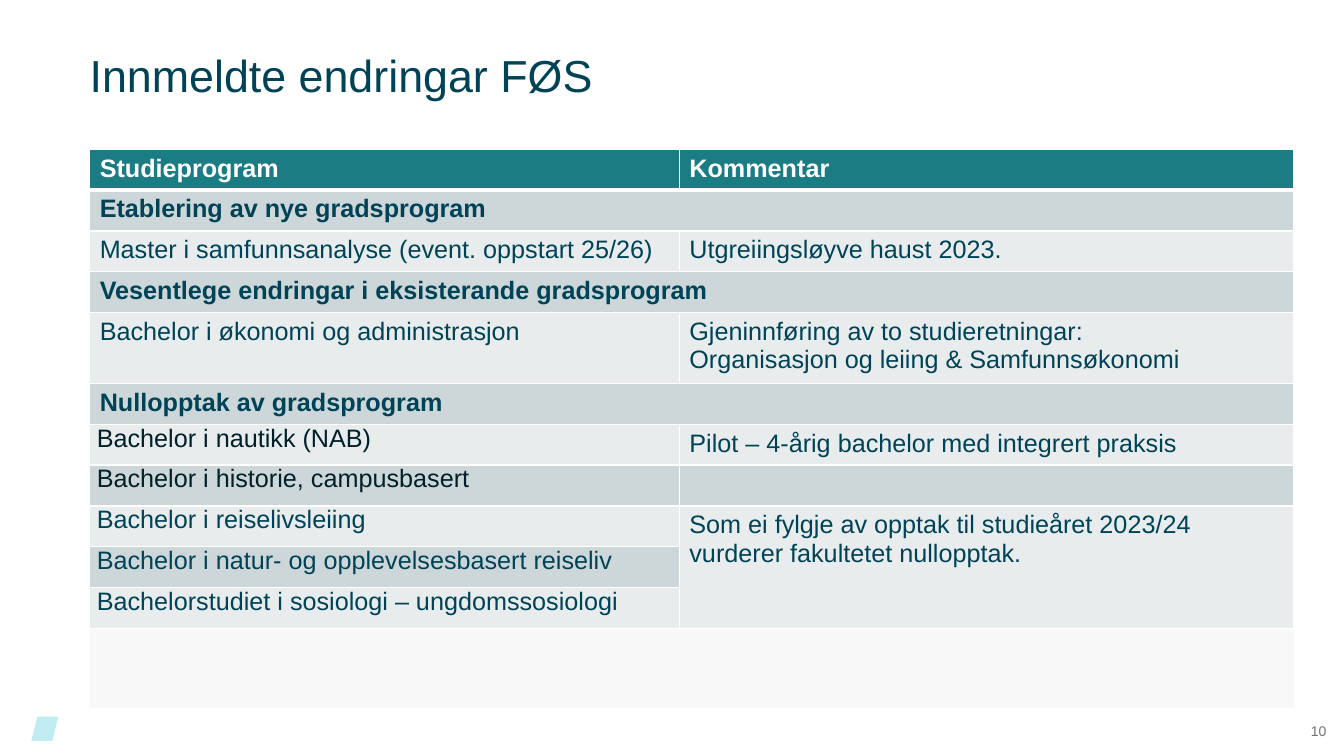
from lxml.etree import SubElement
from pptx import Presentation
from pptx.dml.color import RGBColor
from pptx.enum.shapes import MSO_CONNECTOR, MSO_SHAPE
from pptx.enum.text import MSO_ANCHOR, PP_ALIGN
from pptx.oxml.ns import qn
from pptx.util import Cm, Pt

FONT = "Arial"
TEAL, NAVY, DARK, WHITE = "1B7C83", "004357", "00202A", "FFFFFF"
BAND, PALE = "CDD7D9", "E8ECED"
LEFT, TOP, WIDTH = 2.26, 3.78, 30.35
ROW, TALL = 1.03, 1.64

# Each row: left text, right text, fill, colour of the left text
ROWS = [
    ("Studieprogram", "Kommentar", TEAL, WHITE),
    ("Etablering av nye gradsprogram", None, BAND, NAVY),
    ("Master i samfunnsanalyse (event. oppstart 25/26)",
     "Utgreiingsløyve haust 2023.", PALE, NAVY),
    ("Vesentlege endringar i eksisterande gradsprogram", None, BAND, NAVY),
    ("Bachelor i økonomi og administrasjon",
     "Gjeninnføring av to studieretningar:\n"
     "Organisasjon og leiing & Samfunnsøkonomi", PALE, NAVY),
    ("Nullopptak av gradsprogram", None, BAND, NAVY),
    ("Bachelor i nautikk (NAB)",
     "Pilot – 4-årig bachelor med integrert praksis", PALE, DARK),
    ("Bachelor i historie, campusbasert", "", BAND, DARK),
    ("Bachelor i reiselivsleiing",
     "Som ei fylgje av opptak til studieåret 2023/24 "
     "vurderer fakultetet nullopptak.", PALE, NAVY),
    ("Bachelor i natur- og opplevelsesbasert reiseliv", "", BAND, NAVY),
    ("Bachelorstudiet i sosiologi – ungdomssosiologi", "", PALE, NAVY),
]
TIGHT = 6   # first row with narrow margins
SHARED = 8  # first row of the joint comment


def paint(target, color):
    target.solid()
    target.fore_color.rgb = RGBColor.from_string(color)


def write(frame, text, size, color, bold=False, align=PP_ALIGN.LEFT):
    for i, line in enumerate(text.split("\n")):
        para = frame.paragraphs[0] if i == 0 else frame.add_paragraph()
        para.alignment = align
        if line:
            run = para.add_run()
            run.text = line
            run.font.name = FONT
            run.font.size = Pt(size)
            run.font.bold = bold
            run.font.color.rgb = RGBColor.from_string(color)


def label(slide, box, text, size, color, align=PP_ALIGN.LEFT):
    frame = slide.shapes.add_textbox(*map(Cm, box)).text_frame
    frame.word_wrap = True
    frame.vertical_anchor = MSO_ANCHOR.MIDDLE
    frame.margin_left = frame.margin_right = 0
    frame.margin_top = frame.margin_bottom = 0
    write(frame, text, size, color, align=align)


def block(slide, kind, box, color):
    shape = slide.shapes.add_shape(kind, *map(Cm, box))
    shape.shadow.inherit = False
    paint(shape.fill, color)
    shape.line.fill.background()
    return shape


def fade(shape, share):
    tint = shape.fill._xPr.find(qn("a:solidFill"))[0]
    SubElement(tint, qn("a:alpha"), val=str(share * 1000))


def rule(slide, color, width):
    line = slide.shapes.add_connector(
        MSO_CONNECTOR.STRAIGHT, Cm(LEFT), Cm(TOP), Cm(LEFT + WIDTH), Cm(TOP))
    line.line.color.rgb = RGBColor.from_string(color)
    line.line.width = Pt(width)
    SubElement(line._element.spPr, qn("a:effectLst"))


def frame_cell(cell, base):
    props = cell._tc.get_or_add_tcPr()
    for side, width in zip("LRTB", (1, 1, 1, base)):
        edge = SubElement(props, qn("a:ln" + side), w=str(Pt(width)))
        fill = SubElement(edge, qn("a:solidFill"))
        SubElement(fill, qn("a:srgbClr"), val=WHITE)


def grid(slide):
    table = slide.shapes.add_table(
        len(ROWS), 2, Cm(LEFT), Cm(3.76), Cm(WIDTH), Cm(11.94)).table
    table.columns[0].width = Cm(14.86)
    table.columns[1].width = Cm(WIDTH - 14.86)
    for i, (name, note, fill, color) in enumerate(ROWS):
        table.rows[i].height = Cm(TALL if note and "\n" in note else ROW)
        left, right = table.cell(i, 0), table.cell(i, 1)
        for cell in (left, right):
            frame_cell(cell, 3 if i == 0 else 1)
            paint(cell.fill, fill)
        if i >= TIGHT:
            left.margin_left = left.margin_right = Cm(0.18)
            left.margin_top = left.margin_bottom = 0
        write(left.text_frame, name, 18, color, i == 0 or note is None)
        if note is None:
            left.merge(right)
        else:
            write(right.text_frame, note, 18, WHITE if i == 0 else NAVY, i == 0)
    table.cell(SHARED, 1).merge(table.cell(len(ROWS) - 1, 1))


def main():
    deck = Presentation()
    deck.slide_width, deck.slide_height = Cm(33.87), Cm(19.05)
    slide = deck.slides.add_slide(deck.slide_layouts[6])

    # Backdrop, top rule and corner mark
    panel = block(slide, MSO_SHAPE.RECTANGLE, (LEFT, TOP, WIDTH, 14.05), "F2F2F2")
    fade(panel, 50)
    rule(slide, "00AFBA", 2)
    block(slide, MSO_SHAPE.PARALLELOGRAM, (0.79, 18.06, 0.68, 0.61), "C1ECF2")

    # Title, table and page number
    label(slide, (LEFT, 0, WIDTH, 3.76), "Innmeldte endringar FØS", 32, NAVY)
    grid(slide)
    label(slide, (32.61, 17.81, 1.24, 1.24), "10", 10, "737373", PP_ALIGN.CENTER)

    deck.save("out.pptx")


if __name__ == "__main__":
    main()
